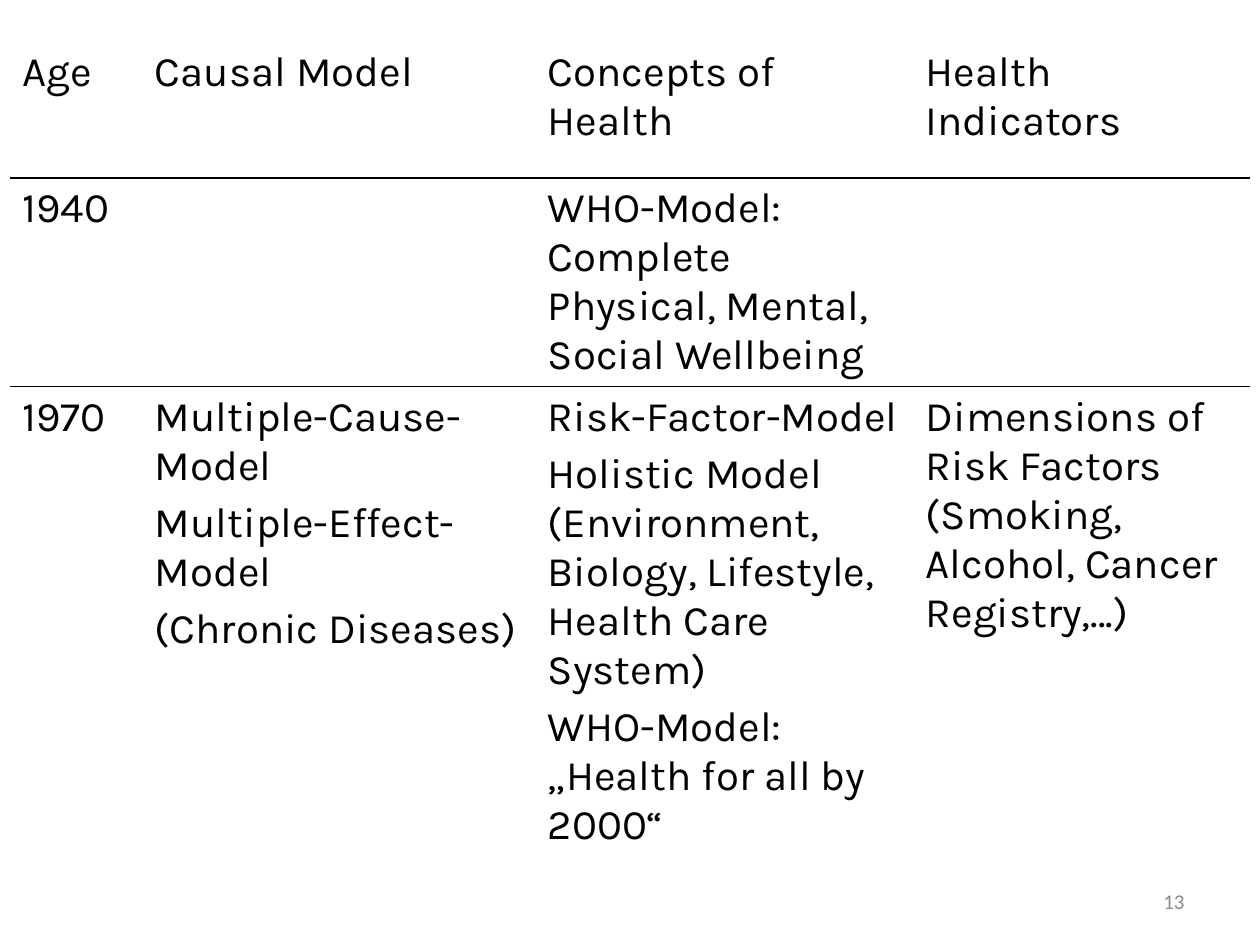
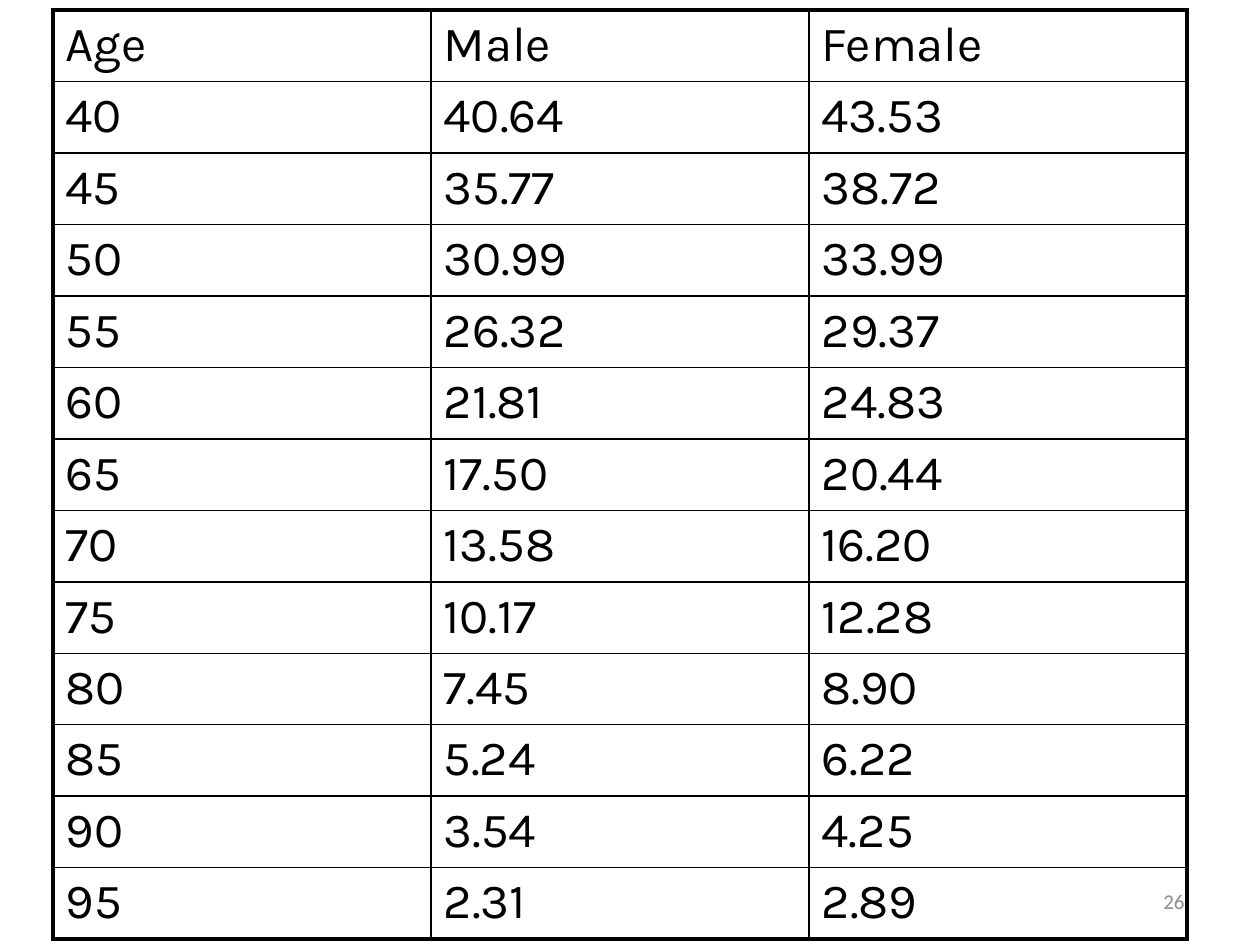
from lxml import etree
from pptx import Presentation
from pptx import util as u
from pptx.dml.color import RGBColor
from pptx.enum import text
from pptx.oxml import ns

BLACK = RGBColor(0x00, 0x00, 0x00)
GREY = RGBColor(0x8C, 0x8C, 0x8C)
BODY_FONT, NUMBER_FONT = "Karla", "Calibri"
PLAIN_STYLE = "{2D5ABB26-0587-4C30-8999-92F81FD0307C}"
THIN, THICK = u.Pt(1), u.Pt(2.25)


def add_run(p, words, font, size, color):
    r = p.add_run()
    r.text = words
    r.font.name, r.font.size = font, u.Pt(size)
    r.font.color.rgb = color


def set_borders(cell, **widths):
    """Draw black edges; the keys are L, R, T and B, in that order."""
    for side, width in widths.items():
        ln = etree.SubElement(cell._tc.get_or_add_tcPr(), ns.qn(f"a:ln{side}"), w=str(width))
        fill = etree.SubElement(ln, ns.qn("a:solidFill"))
        etree.SubElement(fill, ns.qn("a:srgbClr"), val=str(BLACK))


# Each cell is a list of paragraphs
health_models = [
    [["Age"], ["Causal Model"], ["Concepts of Health"], ["Health Indicators"]],
    [["1940"], [], ["WHO-Model: Complete Physical, Mental, Social Wellbeing"], []],
    [["1970"],
     ["Multiple-Cause-Model", "Multiple-Effect-Model", "(Chronic Diseases)"],
     ["Risk-Factor-Model",
      "Holistic Model (Environment, Biology, Lifestyle, Health Care System)",
      "WHO-Model: „Health for all by 2000“"],
     ["Dimensions of Risk Factors (Smoking, Alcohol, Cancer Registry,...)"]],
]
male = [40.64, 35.77, 30.99, 26.32, 21.81, 17.50, 13.58, 10.17, 7.45, 5.24, 3.54, 2.31]
female = [43.53, 38.72, 33.99, 29.37, 24.83, 20.44, 16.20, 12.28, 8.90, 6.22, 4.25, 2.89]
life_expectancy = [[["Age"], ["Male"], ["Female"]]]
for age, m, f in zip(range(40, 100, 5), male, female):
    life_expectancy.append([[str(age)], [f"{m:.2f}"], [f"{f:.2f}"]])

# Page number, rows, left, top, column widths, row heights, text size, full grid
slides = [
    (13, health_models, 0.2, 0.84, [2.67, 7.92, 7.62, 6.78], [2.75, 4.19, 9.93], 24, False),
    (26, life_expectancy, 1.07, 0.2, [7.62] * 3, [1.44] * 13, 28, True),
]

prs = Presentation()
prs.slide_width, prs.slide_height = u.Cm(25.4), u.Cm(19.05)

for number, rows, left, top, widths, heights, size, grid in slides:
    s = prs.slides.add_slide(prs.slide_layouts[6])
    frame = s.shapes.add_table(len(rows), len(widths), u.Cm(left), u.Cm(top),
                               u.Cm(sum(widths)), u.Cm(sum(heights)))
    table = frame.table
    table.first_row = table.horz_banding = False
    table._tbl.tblPr.find(ns.qn("a:tableStyleId")).text = PLAIN_STYLE
    for column, width in zip(table.columns, widths):
        column.width = u.Cm(width)
    for row, height in zip(table.rows, heights):
        row.height = u.Cm(height)

    last_row, last_col = len(rows) - 1, len(widths) - 1
    for i, row in enumerate(rows):
        for j, paragraphs in enumerate(row):
            cell = table.cell(i, j)
            if grid:
                set_borders(cell,
                            L=THICK if j == 0 else THIN,
                            R=THICK if j == last_col else THIN,
                            T=THICK if i == 0 else THIN,
                            B=THICK if i == last_row else THIN)
            elif i == 0:
                set_borders(cell, B=THIN)
            elif i == 1:
                set_borders(cell, T=THIN)
            cell.fill.background()
            tf = cell.text_frame
            for k, words in enumerate(paragraphs):
                p = tf.paragraphs[0] if k == 0 else tf.add_paragraph()
                p.space_before = u.Pt(0.2 * size)
                add_run(p, words, BODY_FONT, size, BLACK)

    sp = s.shapes.add_textbox(u.Cm(18.2), u.Cm(17.66), u.Cm(5.93), u.Cm(1.01))
    tf = sp.text_frame
    tf.word_wrap = True
    tf.vertical_anchor = text.MSO_ANCHOR.MIDDLE
    p = tf.paragraphs[0]
    p.alignment = text.PP_ALIGN.RIGHT
    add_run(p, str(number), NUMBER_FONT, 12, GREY)

prs.save("out.pptx")
